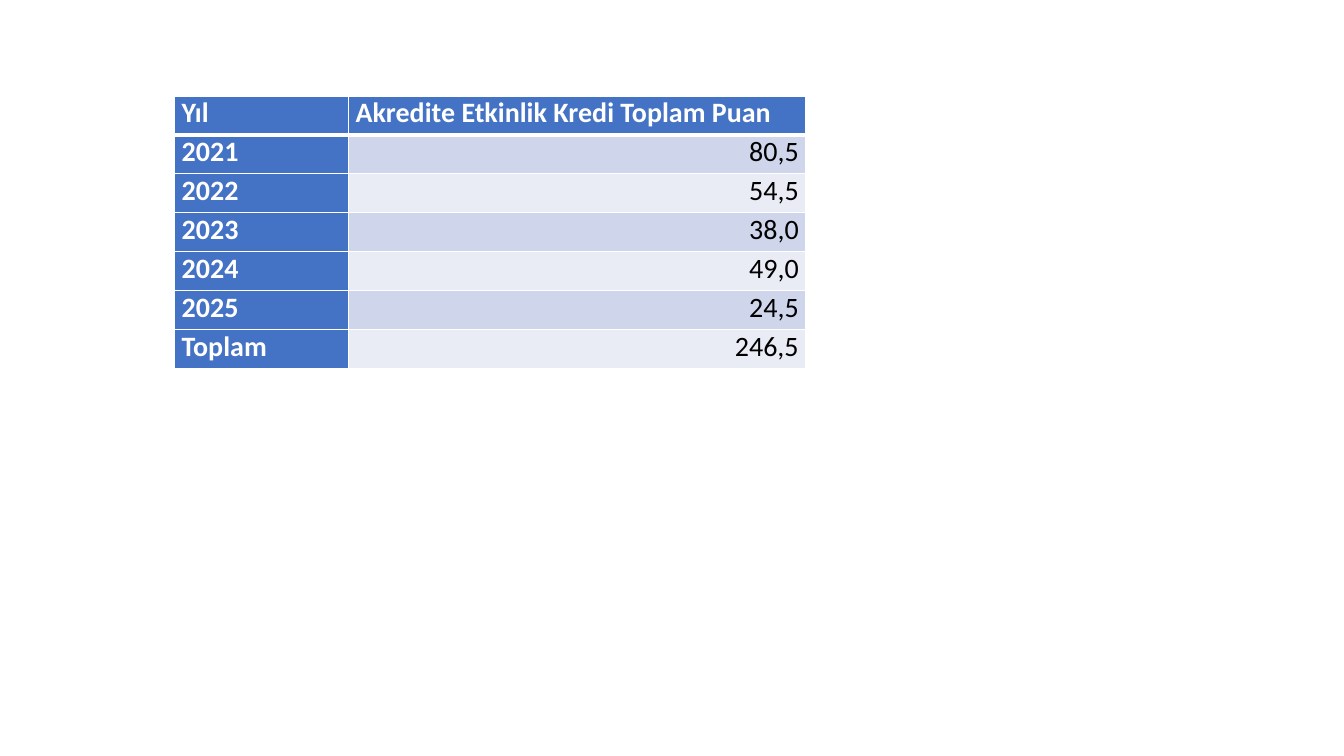
from lxml import etree
from pptx import Presentation
from pptx import util as u
from pptx.dml.color import RGBColor
from pptx.enum import text
from pptx.oxml import ns

WHITE = RGBColor(0xFF, 0xFF, 0xFF)
BLACK = RGBColor(0, 0, 0)
BLUE = RGBColor(0x44, 0x72, 0xC4)
BAND_DARK = RGBColor(0xCF, 0xD5, 0xEA)
BAND_LIGHT = RGBColor(0xE9, 0xEB, 0xF5)

HEADER = ("Yıl", "Akredite Etkinlik Kredi Toplam Puan")
SCORES = (
    ("2021", "80,5"),
    ("2022", "54,5"),
    ("2023", "38,0"),
    ("2024", "49,0"),
    ("2025", "24,5"),
    ("Toplam", "246,5"),
)
COLUMN_WIDTHS = (u.Cm(4.38), u.Cm(11.53))
ROW_HEIGHT = u.Cm(0.98)


def write_text(frame, content, color=BLACK, bold=False, align=text.PP_ALIGN.LEFT):
    paragraph = frame.paragraphs[0]
    paragraph.alignment = align
    run = paragraph.add_run()
    run.text = content
    run.font.name = "Calibri"
    run.font.size = u.Pt(20)
    run.font.bold = bold
    run.font.color.rgb = color


def set_borders(cell, top=1, bottom=1):
    properties = cell._tc.get_or_add_tcPr()
    for side, width in (("L", 1), ("R", 1), ("T", top), ("B", bottom)):
        line = etree.SubElement(properties, ns.qn(f"a:ln{side}"), w=str(u.Pt(width)))
        fill = etree.SubElement(line, ns.qn("a:solidFill"))
        etree.SubElement(fill, ns.qn("a:srgbClr"), val=str(WHITE))


def format_cell(cell, color, top=1, bottom=1):
    set_borders(cell, top, bottom)
    cell.fill.solid()
    cell.fill.fore_color.rgb = color
    cell.margin_left = cell.margin_right = u.Cm(0.18)
    cell.margin_top = cell.margin_bottom = 0


def add_score_table(slide, left, top):
    rows = (HEADER, *SCORES)
    frame = slide.shapes.add_table(
        len(rows), len(HEADER), left, top, sum(COLUMN_WIDTHS), ROW_HEIGHT * len(rows)
    )
    table = frame.table
    table.first_col = True
    for column, width in zip(table.columns, COLUMN_WIDTHS):
        column.width = width
    for row_index, values in enumerate(rows):
        table.rows[row_index].height = ROW_HEIGHT
        band = BAND_DARK if row_index % 2 else BAND_LIGHT
        for column_index, value in enumerate(values):
            cell = table.cell(row_index, column_index)
            heading = row_index == 0 or column_index == 0
            format_cell(
                cell,
                BLUE if heading else band,
                top=3 if row_index == 1 else 1,
                bottom=3 if row_index == 0 else 1,
            )
            if heading:
                write_text(cell.text_frame, value, color=WHITE, bold=True)
            else:
                write_text(cell.text_frame, value, align=text.PP_ALIGN.RIGHT)


def main():
    presentation = Presentation()
    presentation.slide_width = u.Cm(33.87)
    presentation.slide_height = u.Cm(19.05)
    slide = presentation.slides.add_slide(presentation.slide_layouts[6])
    add_score_table(slide, u.Cm(4.4), u.Cm(2.42))
    presentation.save("out.pptx")


if __name__ == "__main__":
    main()
